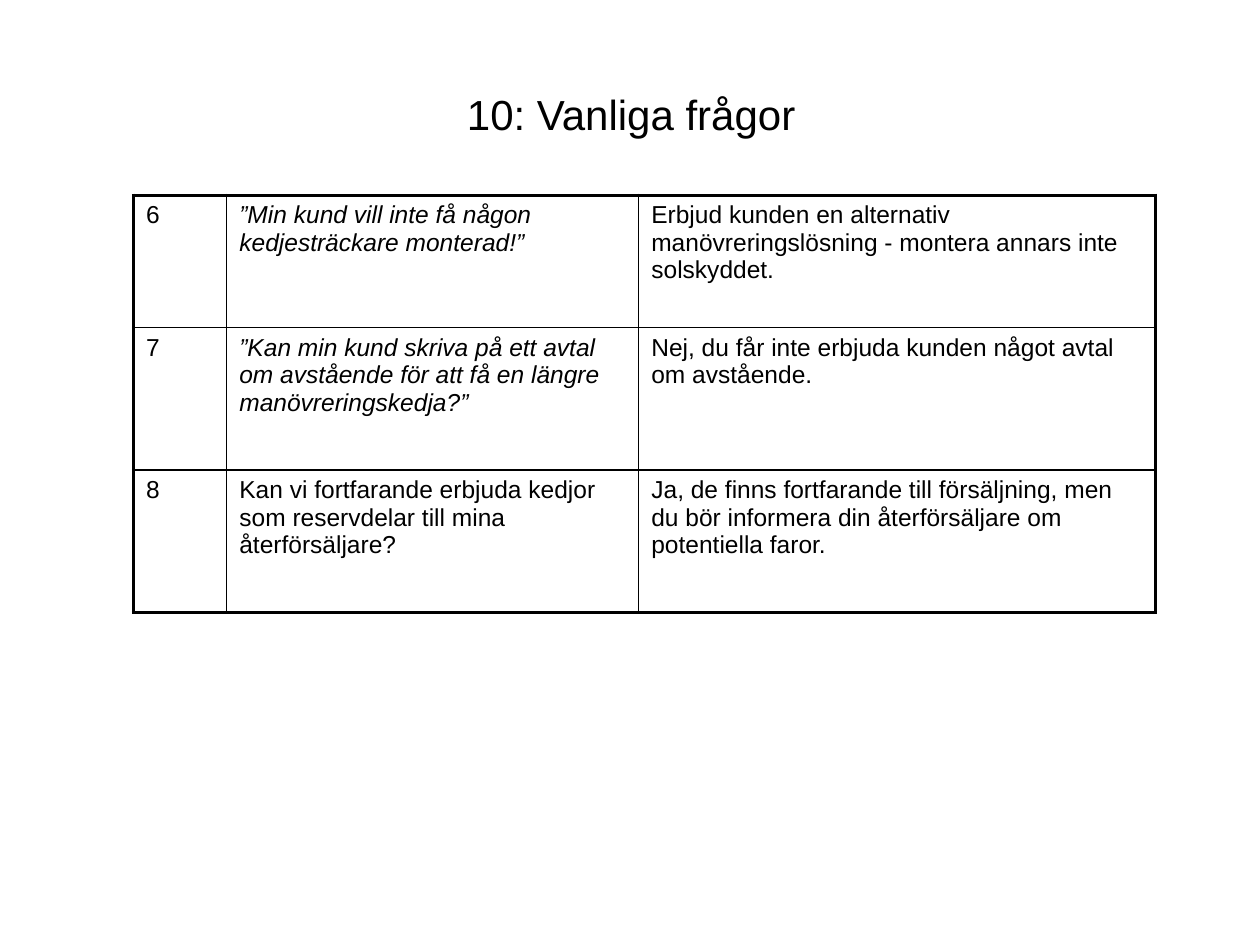
import pptx
import pptx.dml.color
import pptx.enum.text
import pptx.oxml.ns
import pptx.util
from lxml import etree

Inches = pptx.util.Inches
Pt = pptx.util.Pt
BLACK = pptx.dml.color.RGBColor(0, 0, 0)
WHITE = pptx.dml.color.RGBColor(255, 255, 255)
FONT = "Arial"
THICK, THIN = 2.25, 1

COLS = [0.74, 3.27, 4.1]
ROWS = [1.05, 1.13, 1.13]
# Number, question, answer, whether the question is a quote
ITEMS = [
    ("6", "”Min kund vill inte få någon kedjesträckare monterad!”",
     "Erbjud kunden en alternativ manövreringslösning - montera annars inte solskyddet.",
     True),
    ("7", "”Kan min kund skriva på ett avtal om avstående för att få en längre manövreringskedja?”",
     "Nej, du får inte erbjuda kunden något avtal om avstående.",
     True),
    ("8", "Kan vi fortfarande erbjuda kedjor som reservdelar till mina återförsäljare?",
     "Ja, de finns fortfarande till försäljning, men du bör informera din återförsäljare om potentiella faror.",
     False),
]


def style(frame, size, italic=False):
    for run in frame.paragraphs[0].runs:
        run.font.name = FONT
        run.font.size = Pt(size)
        run.font.italic = italic
        run.font.color.rgb = BLACK


def add_edge(cell, side, width):
    qn = pptx.oxml.ns.qn
    line = etree.SubElement(cell._tc.get_or_add_tcPr(), qn(f"a:ln{side}"),
                            w=str(Pt(width)))
    fill = etree.SubElement(line, qn("a:solidFill"))
    etree.SubElement(fill, qn("a:srgbClr"), val=str(BLACK))


def add_title(slide, left, top, width, height):
    title = slide.shapes.title
    title.left, title.top = Inches(left), Inches(top)
    title.width, title.height = Inches(width), Inches(height)
    frame = title.text_frame
    frame.text = "10: Vanliga frågor"
    frame.vertical_anchor = pptx.enum.text.MSO_ANCHOR.MIDDLE
    frame.paragraphs[0].alignment = pptx.enum.text.PP_ALIGN.CENTER
    style(frame, 24)


def add_faq(slide, left, top, width, height):
    table = slide.shapes.add_table(
        len(ROWS), len(COLS), Inches(left), Inches(top),
        Inches(width), Inches(height)).table
    table.first_row = table.horz_banding = False
    for col, size in zip(table.columns, COLS):
        col.width = Inches(size)
    for row, size in zip(table.rows, ROWS):
        row.height = Inches(size)

    for r, (*texts, quote) in enumerate(ITEMS):
        for c, text in enumerate(texts):
            cell = table.cell(r, c)
            cell.text_frame.text = text
            style(cell.text_frame, 14, quote and c == 1)
            # Thick outer frame, thin inner lines
            outer = {"L": c == 0, "R": c == len(COLS) - 1,
                     "T": r == 0, "B": r == len(ROWS) - 1}
            for side, thick in outer.items():
                add_edge(cell, side, THICK if thick else THIN)
            cell.fill.background()


def main():
    deck = pptx.Presentation()
    deck.slide_width, deck.slide_height = Inches(10), Inches(7.5)
    slide = deck.slides.add_slide(deck.slide_layouts[5])
    slide.background.fill.solid()
    slide.background.fill.fore_color.rgb = WHITE
    add_title(slide, 0.51, 0.28, 9, 1.25)
    add_faq(slide, 1.06, 1.55, sum(COLS), sum(ROWS))
    deck.save("out.pptx")


if __name__ == "__main__":
    main()
